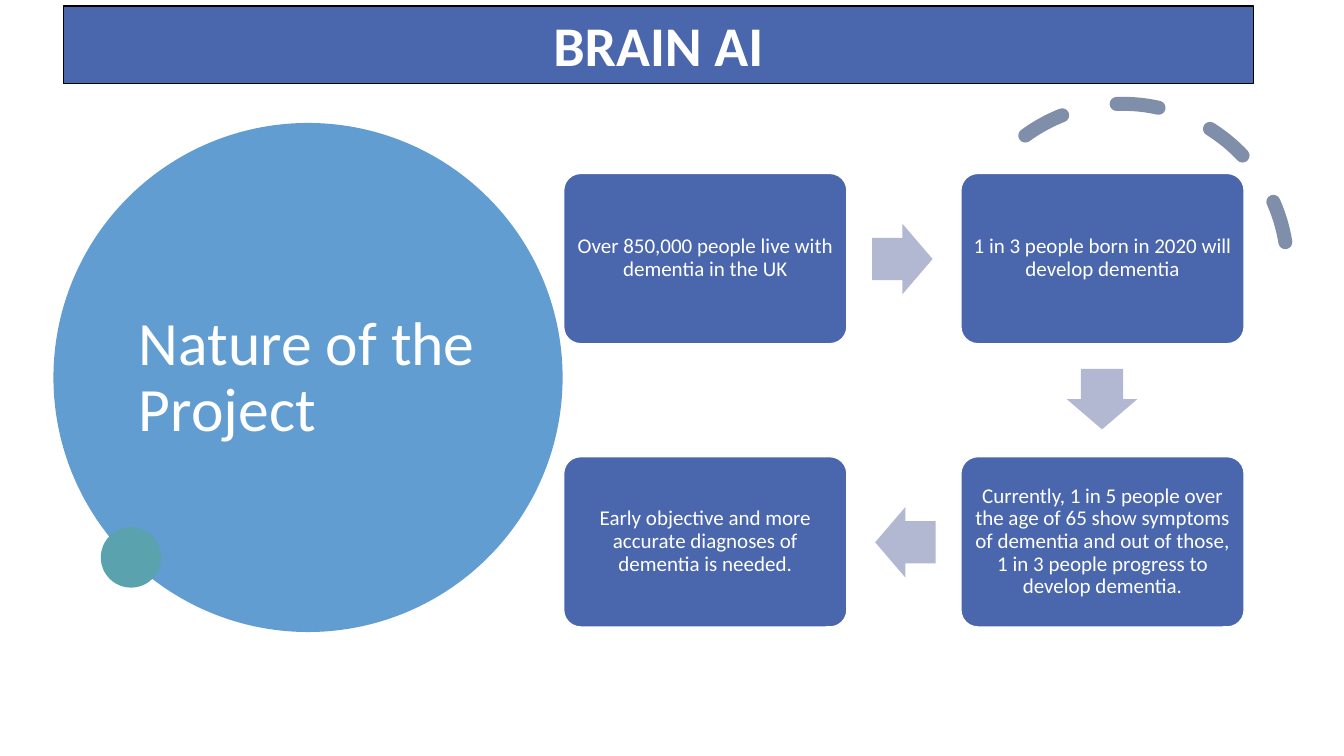
from pptx import Presentation
from pptx.dml.color import RGBColor
from pptx.enum.dml import MSO_LINE
from pptx.enum.shapes import MSO_SHAPE
from pptx.enum.text import MSO_ANCHOR, PP_ALIGN
from pptx.oxml.ns import qn
from pptx.util import Inches, Pt

ARC, OVAL, RECT = MSO_SHAPE.ARC, MSO_SHAPE.OVAL, MSO_SHAPE.RECTANGLE
ROUNDED, ARROW = MSO_SHAPE.ROUNDED_RECTANGLE, MSO_SHAPE.RIGHT_ARROW
DASH = MSO_LINE.DASH
TOP, MIDDLE = MSO_ANCHOR.TOP, MSO_ANCHOR.MIDDLE
LEFT, CENTER = PP_ALIGN.LEFT, PP_ALIGN.CENTER
WHITE, BLUE = "FFFFFF", "4A66AC"

prs = Presentation()
prs.slide_width, prs.slide_height = Inches(13.33), Inches(7.5)
s = prs.slides.add_slide(prs.slide_layouts[6])


def add_shape(kind, x, y, w, h, fill=None, line=None, width=1, adj=(), rot=0):
    sp = s.shapes.add_shape(kind, Inches(x), Inches(y), Inches(w), Inches(h))
    sp.shadow.inherit = False
    sp.rotation = rot
    for i, value in enumerate(adj):
        sp.adjustments[i] = value
    for part, color in ((sp.fill, fill), (sp.line.fill, line)):
        if color:
            part.solid()
            part.fore_color.rgb = RGBColor.from_string(color)
        else:
            part.background()
    if line:
        sp.line.width = Pt(width)
    return sp


def set_text(sp, text, size, bold=False, align=CENTER, anchor=MIDDLE,
             spacing=0.9, inset_x=0.1, inset_y=0.05):
    tf = sp.text_frame
    tf.word_wrap = True
    tf.vertical_anchor = anchor
    tf.margin_left = tf.margin_right = Inches(inset_x)
    tf.margin_top = tf.margin_bottom = Inches(inset_y)
    p = tf.paragraphs[0]
    p.alignment, p.line_spacing = align, spacing
    r = p.add_run()
    r.text = text
    r.font.name, r.font.size, r.font.bold = "Calibri", Pt(size), bold
    r.font.color.rgb = RGBColor.from_string(WHITE)


# Title circle with its accents
add_shape(OVAL, 0.53, 1.22, 5.05, 5.05, fill="629DD1")
title = s.shapes.add_textbox(Inches(1.28), Inches(1.53), Inches(3.54), Inches(4.45))
set_text(title, "Nature of the Project", 44, align=LEFT)

arc = add_shape(ARC, 9.5, 1.03, 3.27, 3.27, line="7F8FA9", width=10,
                adj=(158.17, 17.81), rot=330.2)
arc.line.dash_style = DASH
arc.element.spPr.find(qn("a:ln")).set("cap", "rnd")
add_shape(OVAL, 1, 5.23, 0.6, 0.6, fill="5AA2AE")

# Four steps, clockwise from the top left
COLS, ROWS = (5.59, 9.53), (1.72, 4.53)
steps = [
    (0, 0, "Over 850,000 people live with dementia in the UK"),
    (1, 0, "1 in 3 people born in 2020 will develop dementia"),
    (1, 1, "Currently, 1 in 5 people over the age of 65 show symptoms of dementia "
           "and out of those, 1 in 3 people progress to develop dementia."),
    (0, 1, "Early objective and more accurate diagnoses of dementia is needed."),
]
for col, row, text in steps:
    box = add_shape(ROUNDED, COLS[col], ROWS[row], 2.81, 1.69, fill=BLUE,
                    line=WHITE, adj=(0.1,))
    set_text(box, text, 15, inset_x=0.06, inset_y=0.06)

for x, y, rot in ((8.65, 2.22, 0), (10.63, 3.61, 90), (8.68, 5.03, 180)):
    add_shape(ARROW, x, y, 0.6, 0.7, fill="B2B8D2", adj=(0.6, 0.5), rot=rot)

# Banner
banner = add_shape(RECT, 0.63, 0.06, 11.8, 0.77, fill=BLUE, line="000000", width=0.75)
set_text(banner, "BRAIN AI", 40, bold=True, anchor=TOP, spacing=1.0)

prs.save("out.pptx")
